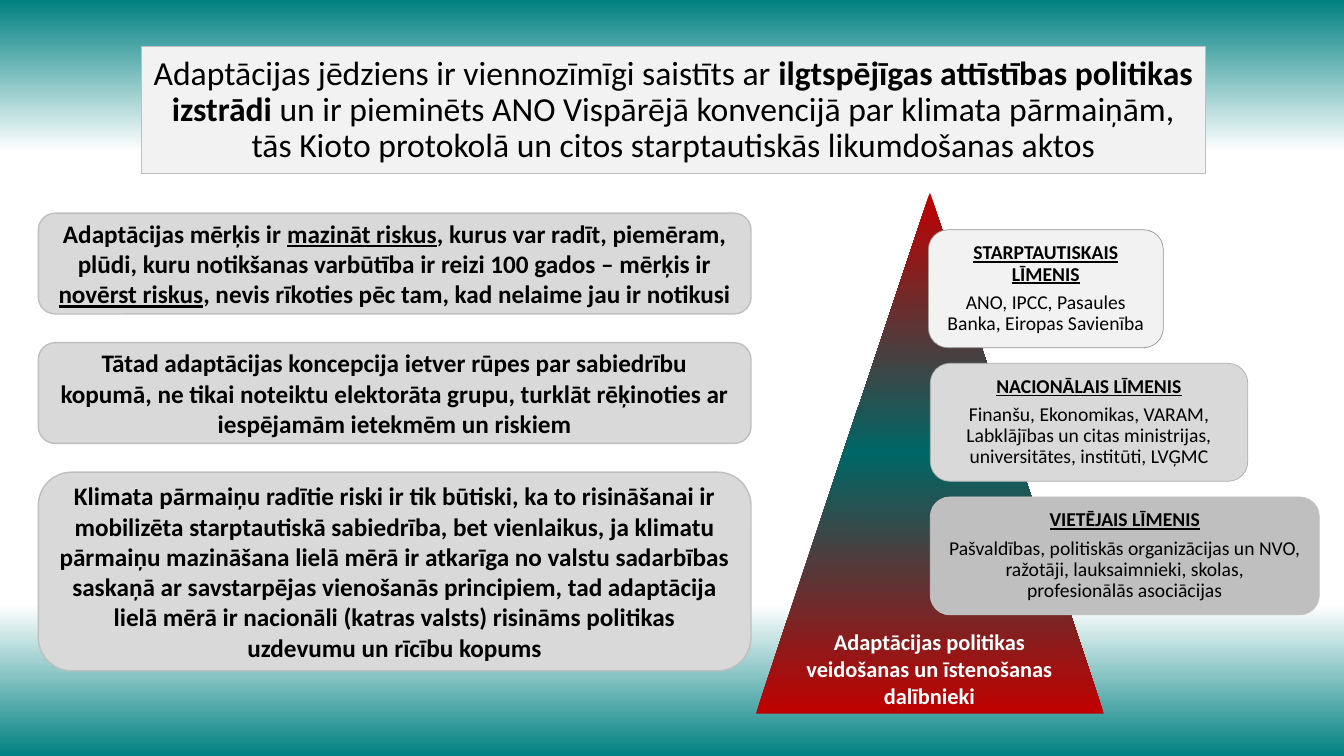
from dataclasses import dataclass

from lxml import etree
from pptx import Presentation
from pptx import util as u
from pptx.dml.color import RGBColor
from pptx.enum import shapes, text
from pptx.oxml.ns import qn

BLACK = RGBColor(0x00, 0x00, 0x00)
WHITE = RGBColor(0xFF, 0xFF, 0xFF)
TEAL = RGBColor(0x00, 0x80, 0x80)
DEEP_TEAL = RGBColor(0x00, 0x66, 0x66)
RED = RGBColor(0xC0, 0x00, 0x00)
PALE = RGBColor(0xF2, 0xF2, 0xF2)
LIGHT = RGBColor(0xD9, 0xD9, 0xD9)
SILVER = RGBColor(0xBF, 0xBF, 0xBF)
EDGE_DARK = RGBColor(0x96, 0x96, 0x96)
EDGE_MIDDLE = RGBColor(0xAE, 0xAE, 0xAE)
EDGE_LIGHT = RGBColor(0xC6, 0xC6, 0xC6)

WIDTH, HEIGHT = u.Inches(13.33), u.Inches(7.5)
FONT = "Calibri"


@dataclass(frozen=True)
class Area:
    """Left, top, width and height in percent of the slide."""
    left: float
    top: float
    width: float
    height: float

    def emu(self) -> tuple[int, int, int, int]:
        return (round(self.left * WIDTH / 100), round(self.top * HEIGHT / 100),
                round(self.width * WIDTH / 100), round(self.height * HEIGHT / 100))


@dataclass(frozen=True)
class Span:
    text: str
    bold: bool | None = None
    underline: bool | None = None


@dataclass(frozen=True)
class Style:
    size: float
    bold: bool = False
    underline: bool = False
    color: RGBColor = BLACK
    line_spacing: float = 1.0
    space_after: float = 0


@dataclass(frozen=True)
class Statement:
    height: float
    spans: tuple[Span, ...]


@dataclass(frozen=True)
class Level:
    left: float
    width: float
    fill: RGBColor
    edge: RGBColor
    heading: str
    members: str


TITLE_AREA = Area(10.5, 6.2, 79.2, 16.8)
TRIANGLE_AREA = Area(56.25, 25.47, 25.88, 68.93)
CAPTION_AREA = Area(57.75, 82.4, 22.8, 12.13)
STATEMENT_LEFT, STATEMENT_TOP, STATEMENT_WIDTH, STATEMENT_GAP = 2.85, 28.2, 53.03, 3.8
LEVEL_TOP, LEVEL_HEIGHT, LEVEL_PITCH = 30.4, 15.6, 17.67
LEVEL_INSET = u.Inches(0.12)

TITLE_STYLE = Style(24, line_spacing=0.9)
STATEMENT_STYLE = Style(18, bold=True)
HEADING_STYLE = Style(14, bold=True, underline=True, line_spacing=0.9, space_after=5)
MEMBERS_STYLE = Style(14, line_spacing=0.9, space_after=5)
CAPTION_STYLE = Style(16, bold=True, color=WHITE)

TITLE = (
    Span("Adaptācijas jēdziens ir viennozīmīgi saistīts ar "),
    Span("ilgtspējīgas attīstības politikas izstrādi ", bold=True),
    Span("un ir pieminēts ANO Vispārējā konvencijā par klimata pārmaiņām, "
         "tās Kioto protokolā un citos starptautiskās likumdošanas aktos"),
)
STATEMENTS = (
    Statement(13.33, (
        Span("Adaptācijas mērķis ir "),
        Span("mazināt riskus", underline=True),
        Span(", kurus var radīt, piemēram, plūdi, kuru notikšanas varbūtība "
             "ir reizi 100 gados – mērķis ir "),
        Span("novērst riskus", underline=True),
        Span(", nevis rīkoties pēc tam, kad nelaime jau ir notikusi"))),
    Statement(13.33, (
        Span("Tātad adaptācijas koncepcija ietver rūpes par sabiedrību kopumā, "
             "ne tikai noteiktu elektorāta grupu, turklāt rēķinoties ar "
             "iespējamām ietekmēm un riskiem"),)),
    Statement(26.27, (
        Span("Klimata pārmaiņu radītie riski ir tik būtiski, ka to risināšanai ir "
             "mobilizēta starptautiskā sabiedrība, bet vienlaikus, ja klimatu "
             "pārmaiņu mazināšana lielā mērā ir atkarīga no valstu sadarbības "
             "saskaņā ar savstarpējas vienošanās principiem, tad adaptācija "
             "lielā mērā ir nacionāli (katras valsts) risināms politikas "
             "uzdevumu un rīcību kopums"),)),
)
LEVELS = (
    Level(69.08, 17.48, PALE, EDGE_DARK, "STARPTAUTISKAIS LĪMENIS",
          "ANO, IPCC, Pasaules Banka, Eiropas Savienība"),
    Level(69.22, 23.62, LIGHT, EDGE_MIDDLE, "NACIONĀLAIS LĪMENIS",
          "Finanšu, Ekonomikas, VARAM, Labklājības un citas ministrijas, "
          "universitātes, institūti, LVĢMC"),
    Level(69.22, 28.95, SILVER, EDGE_LIGHT, "VIETĒJAIS LĪMENIS",
          "Pašvaldības, politiskās organizācijas un NVO, ražotāji, "
          "lauksaimnieki, skolas,\nprofesionālās asociācijas"),
)
CAPTION = "Adaptācijas politikas veidošanas un īstenošanas dalībnieki"


def paint_gradient(fill, owner, stops: tuple[tuple[int, RGBColor], ...]) -> None:
    fill.gradient()
    fill.gradient_angle = 270
    stop_list = next(owner.iter(qn("a:gsLst")))
    for old_stop in list(stop_list):
        stop_list.remove(old_stop)
    for percent, color in stops:
        stop = etree.SubElement(stop_list, qn("a:gs"), pos=str(percent * 1000))
        etree.SubElement(stop, qn("a:srgbClr"), val=str(color))


def write(para, spans: tuple[Span, ...], style: Style) -> None:
    para.alignment = text.PP_ALIGN.CENTER
    para.line_spacing = style.line_spacing
    para.space_after = u.Pt(style.space_after)
    font = para.font
    font.name, font.size = FONT, u.Pt(style.size)
    font.bold, font.underline = style.bold, style.underline
    font.color.rgb = style.color
    for span in spans:
        for number, line in enumerate(span.text.split("\n")):
            if number:
                para.add_line_break()
            run = para.add_run()
            run.text = line
            if span.bold is not None:
                run.font.bold = span.bold
            if span.underline is not None:
                run.font.underline = span.underline


def finish_panel(box, fill: RGBColor, edge: RGBColor, edge_width: float) -> None:
    box.fill.solid()
    box.fill.fore_color.rgb = fill
    box.line.color.rgb = edge
    box.line.width = u.Pt(edge_width)
    frame = box.text_frame
    frame.word_wrap = True
    frame.auto_size = text.MSO_AUTO_SIZE.NONE
    frame.vertical_anchor = text.MSO_ANCHOR.MIDDLE


def add_panel(page, area: Area, fill: RGBColor, edge: RGBColor, edge_width: float):
    box = page.shapes.add_shape(shapes.MSO_SHAPE.ROUNDED_RECTANGLE, *area.emu())
    box.shadow.inherit = False
    finish_panel(box, fill, edge, edge_width)
    return box


def set_title(page) -> None:
    box = page.shapes.title
    box.left, box.top, box.width, box.height = TITLE_AREA.emu()
    outline = etree.SubElement(box.element.spPr, qn("a:prstGeom"), prst="roundRect")
    guides = etree.SubElement(outline, qn("a:avLst"))
    etree.SubElement(guides, qn("a:gd"), name="adj", fmla="val 18400")
    finish_panel(box, PALE, SILVER, 0.75)
    write(box.text_frame.paragraphs[0], TITLE, TITLE_STYLE)


def add_statements(page) -> None:
    top = STATEMENT_TOP
    for statement in STATEMENTS:
        area = Area(STATEMENT_LEFT, top, STATEMENT_WIDTH, statement.height)
        box = add_panel(page, area, LIGHT, SILVER, 1)
        write(box.text_frame.paragraphs[0], statement.spans, STATEMENT_STYLE)
        top += statement.height + STATEMENT_GAP


def add_pyramid(page) -> None:
    triangle = page.shapes.add_shape(shapes.MSO_SHAPE.ISOSCELES_TRIANGLE, *TRIANGLE_AREA.emu())
    triangle.shadow.inherit = False
    paint_gradient(triangle.fill, triangle.element, ((0, RED), (50, DEEP_TEAL), (100, RED)))
    triangle.line.fill.background()
    for row, level in enumerate(LEVELS):
        area = Area(level.left, LEVEL_TOP + row * LEVEL_PITCH, level.width, LEVEL_HEIGHT)
        frame = add_panel(page, area, level.fill, level.edge, 0.5).text_frame
        frame.margin_left = frame.margin_right = LEVEL_INSET
        frame.margin_top = frame.margin_bottom = LEVEL_INSET
        write(frame.paragraphs[0], (Span(level.heading),), HEADING_STYLE)
        write(frame.add_paragraph(), (Span(level.members),), MEMBERS_STYLE)
    caption = page.shapes.add_textbox(*CAPTION_AREA.emu())
    caption.text_frame.word_wrap = True
    write(caption.text_frame.paragraphs[0], (Span(CAPTION),), CAPTION_STYLE)


def main() -> None:
    deck = Presentation()
    deck.slide_width, deck.slide_height = WIDTH, HEIGHT
    page = deck.slides.add_slide(deck.slide_layouts[5])
    paint_gradient(page.background.fill, page.element,
                   ((0, TEAL), (20, WHITE), (80, WHITE), (100, TEAL)))
    set_title(page)
    add_pyramid(page)
    add_statements(page)
    deck.save("out.pptx")


if __name__ == "__main__":
    main()
